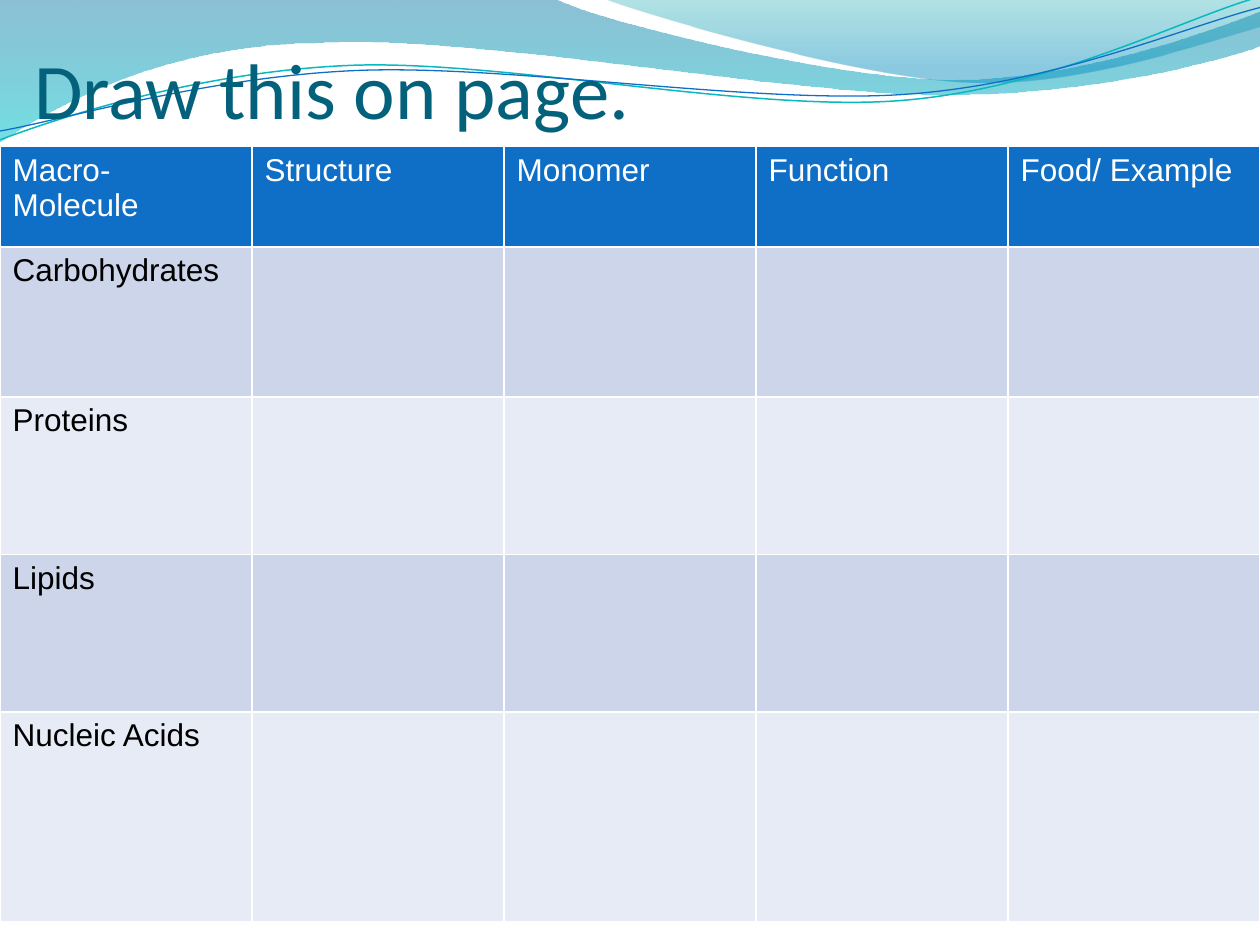
import pptx
import pptx.dml.color
import pptx.enum.text
import pptx.oxml.ns
import pptx.util
from lxml import etree

COLORS = {
    "title": "04617B", "header": "0F6FC6", "header text": "FFFFFF", "body text": "000000",
    "odd row": "CCD5EA", "even row": "E7EBF5",
    "teal line": "0AB8BF", "blue line": "0F6FC6",
    "wave top": "0074A1", "wave bottom": "00C6CF",
    "crest top": "00A1A9", "crest bottom": "008BBF",
}


def color(name):
    return pptx.dml.color.RGBColor.from_string(COLORS[name])


def add_wave(shapes, start, segments, close):
    """Draw straight (x, y) and cubic (x1, y1, x2, y2, x, y) segments, in inches."""
    qn = pptx.oxml.ns.qn
    inches = pptx.util.Inches
    builder = shapes.build_freeform(inches(start[0]), inches(start[1]))
    builder.add_line_segments([(inches(s[-2]), inches(s[-1])) for s in segments], close=close)
    shape = builder.convert_to_shape()
    shape.shadow.inherit = False
    lines = list(shape.element.iter(qn("a:lnTo")))
    for line, segment in zip(lines, segments):
        if len(segment) == 6:
            curve = etree.Element(qn("a:cubicBezTo"))
            for x, y in zip(segment[::2], segment[1::2]):
                etree.SubElement(curve, qn("a:pt"), x=str(inches(x) - shape.left),
                                 y=str(inches(y) - shape.top))
            line.getparent().replace(line, curve)
    return shape


presentation = pptx.Presentation()
presentation.slide_width = pptx.util.Inches(10)
presentation.slide_height = pptx.util.Inches(7.5)
slide = presentation.slides.add_slide(presentation.slide_layouts[5])
shapes = slide.shapes

# Translucent waves: start, segments, gradient stops (color, position, opacity)
filled_waves = [
    ((0, -0.01),
     [(4.4, -0.01), (4.76, 0.17, 6.64, 0.63, 7.58, 0.63), (8.53, 0.63, 9.58, 0.26, 10, 0.09),
      (10.01, 0.36), (9.83, 0.44, 8.7, 0.76, 7.46, 0.75), (6.22, 0.75, 3.82, 0.28, 2.57, 0.34),
      (1.29, 0.35, 0.46, 0.83, -0.01, 1.13), (0, -0.01)],
     [("wave top", 0, 45), ("wave bottom", 1, 55)]),
    ((4.79, -0.01),
     [(5.09, 0.11, 6.82, 0.62, 7.69, 0.65), (8.56, 0.69, 9.61, 0.32, 10, 0.21), (10, 0),
      (4.79, -0.01)],
     [("crest top", 0, 30), ("crest bottom", 0.8, 45)]),
]
for start, segments, stops in filled_waves:
    wave = add_wave(shapes, start, segments, close=True)
    wave.line.fill.background()
    wave.fill.gradient()
    wave.fill.gradient_angle = 270
    for stop, (name, position, opacity) in zip(wave.fill.gradient_stops, stops):
        stop.color.rgb = color(name)
        stop.position = position
    rgb_elements = wave.element.spPr.iter(pptx.oxml.ns.qn("a:srgbClr"))
    for element, (name, position, opacity) in zip(rgb_elements, stops):
        etree.SubElement(element, pptx.oxml.ns.qn("a:alpha"), val=str(opacity * 1000))

line_waves = [
    ((0, 1.11),
     [(0.48, 0.93, 1.58, 0.57, 2.77, 0.52), (3.95, 0.47, 5.93, 0.89, 7.13, 0.8),
      (8.33, 0.71, 9.38, 0.15, 9.98, -0.02)], "teal line", 0.85),
    ((0, 1.04),
     [(0.47, 0.96, 1.64, 0.61, 2.83, 0.56), (4.03, 0.51, 5.97, 0.83, 7.17, 0.75),
      (8.36, 0.67, 9.41, 0.21, 10, 0.06)], "blue line", 0.75),
]
for start, segments, name, width in line_waves:
    wave = add_wave(shapes, start, segments, close=False)
    wave.fill.background()
    wave.line.color.rgb = color(name)
    wave.line.width = pptx.util.Pt(width)

# Worksheet table
headings = ["Macro- Molecule", "Structure", "Monomer", "Function", "Food/ Example"]
molecules = ["Carbohydrates", "Proteins", "Lipids", "Nucleic Acids"]
row_heights = [0.8, 1.19, 1.25, 1.25, 1.67]
table = shapes.add_table(
    len(row_heights), len(headings), 0, pptx.util.Inches(1.16),
    presentation.slide_width, pptx.util.Inches(sum(row_heights))).table
for row, height in zip(table.rows, row_heights):
    row.height = pptx.util.Inches(height)

contents = [headings] + [[molecule] + [""] * (len(headings) - 1) for molecule in molecules]
for row_index, texts in enumerate(contents):
    is_header = row_index == 0
    fill_name = "header" if is_header else "odd row" if row_index % 2 else "even row"
    for column_index, text in enumerate(texts):
        cell = table.cell(row_index, column_index)
        cell.fill.solid()
        cell.fill.fore_color.rgb = color(fill_name)
        if text:
            cell.text = text
            font = cell.text_frame.paragraphs[0].font
            font.name = "Arial"
            font.size = pptx.util.Pt(18)
            font.bold = False
            font.color.rgb = color("header text" if is_header else "body text")

# Title, in front of the waves
title = shapes.title
shapes.element.append(title.element)
title.left, title.top = pptx.util.Inches(0.17), pptx.util.Inches(0.42)
title.width, title.height = pptx.util.Inches(9.67), pptx.util.Inches(0.75)
title.text_frame.text = "Draw this on page."
title.text_frame.vertical_anchor = pptx.enum.text.MSO_ANCHOR.BOTTOM
title.text_frame.auto_size = pptx.enum.text.MSO_AUTO_SIZE.NONE
title.text_frame.margin_bottom = pptx.util.Inches(0.1)
paragraph = title.text_frame.paragraphs[0]
paragraph.alignment = pptx.enum.text.PP_ALIGN.LEFT
paragraph.line_spacing = 0.8
paragraph.font.name = "Calibri"
paragraph.font.size = pptx.util.Pt(45)
paragraph.font.color.rgb = color("title")

presentation.save("out.pptx")
